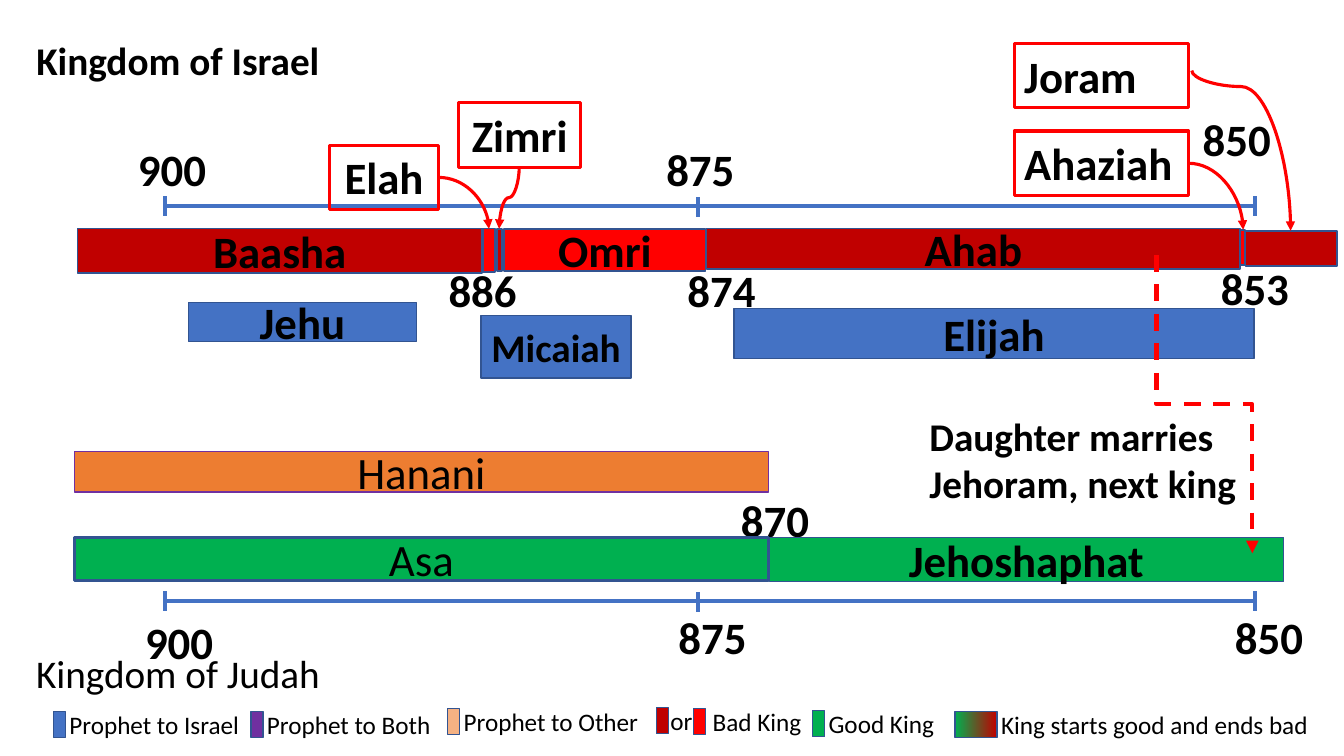
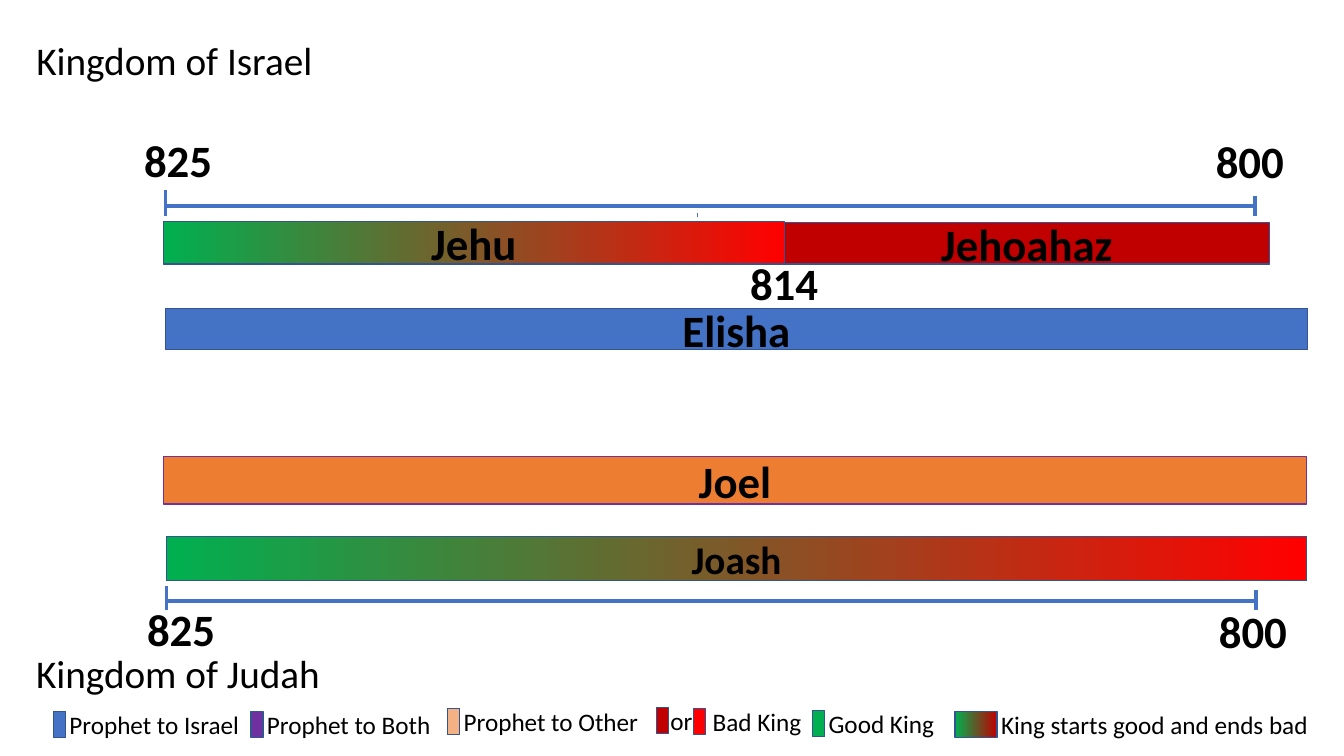
from lxml.etree import SubElement
from pptx import Presentation
from pptx.dml.color import RGBColor
from pptx.enum.dml import MSO_LINE
from pptx.enum.shapes import MSO_CONNECTOR as Connector, MSO_SHAPE as Shape
from pptx.enum.text import MSO_ANCHOR as Anchor, MSO_AUTO_SIZE as AutoSize, PP_ALIGN as Align
from pptx.oxml.ns import qn
from pptx.util import Inches, Pt

SLIDE_SIZE = 13.33, 7.5
FONT = "Calibri"
BLACK, RED, AXIS_BLUE, OUTLINE = "000000", "FF0000", "4472C4", "325491"
DARK_RED, GREEN, PURPLE = "C00000", "00B050", "7030A0"
YEAR = {"size": 32, "bold": True}
HEADING = {"size": 28, "bold": False}
LEGEND = {"size": 18, "bold": False}
YEAR_SIZE = 0.89, 0.64
HEADING_SIZE = 6.66, 0.57
HEADING_LEFT, ISRAEL_TOP, JUDAH_TOP = 0.26, 0.31, 6.39
ISRAEL_AXIS, JUDAH_AXIS = 2.04, 5.96

# role: (fill or gradient pair, outline)
ROLES = {
    "prophet": (AXIS_BLUE, OUTLINE),
    "other prophet": ("ED7D31", PURPLE),
    "bad": (DARK_RED, OUTLINE),
    "worse": (RED, OUTLINE),
    "good": (GREEN, OUTLINE),
    "good to bad": ((GREEN, RED), OUTLINE),
}

# swatch left, top, width, fill, label left, label width, label
LEGEND_ITEMS = [
    (0.53, 7.06, 0.12, AXIS_BLUE, 0.59, 1.9, "Prophet to Israel"),
    (2.49, 7.06, 0.12, PURPLE, 2.55, 1.84, "Prophet to Both"),
    (4.44, 7.03, 0.12, "F4B183", 4.5, 1.95, "Prophet to Other"),
    (6.51, 7.02, 0.12, DARK_RED, 6.55, 0.42, "or"),
    (6.88, 7.03, 0.12, RED, 6.97, 1.09, "Bad King"),
    (8.06, 7.05, 0.12, GREEN, 8.12, 1.26, "Good King"),
    (9.47, 7.06, 0.42, (GREEN, DARK_RED), 9.83, 3.28, "King starts good and ends bad"),
]

# axes: y, left, [(tick x, offset above, offset below, line width)]
# bars: text, left, top, width, height, role, format changes
# callouts: text, left, top, width, alignment
# arrows: preset, begin, end, vertical start, adjustment, line width, dashed
FULL_TICKS = [(1.64, -0.1, 0.1, 3), (6.92, -0.09, 0.11, 3), (12.45, -0.1, 0.1, 3)]
SLIDES = [
    {
        "title": {"bold": True},
        "axes": [(ISRAEL_AXIS, 1.64, FULL_TICKS), (JUDAH_AXIS, 1.64, FULL_TICKS)],
        "years": [
            ("900", 1.27, 1.36), ("875", 6.51, 1.36), ("850", 11.83, 1.06),
            ("886", 4.35, 2.56), ("874", 6.72, 2.56), ("853", 12.01, 2.54),
            ("900", 1.34, 6.05), ("875", 6.63, 6), ("850", 12.15, 6),
            ("870", 7.25, 4.84),
        ],
        "bars": [
            ("Baasha", 0.77, 2.27, 4.01, 0.44, "bad", {}),
            ("", 4.79, 2.27, 0.12, 0.43, "worse", {}),
            ("", 4.93, 2.27, 0.05, 0.42, "bad", {}),
            ("Omri", 5, 2.27, 2, 0.42, "worse", {}),
            ("Ahab", 7.01, 2.27, 5.29, 0.4, "bad", {}),
            ("", 12.3, 2.28, 0.05, 0.35, "worse", {}),
            ("", 12.35, 2.29, 0.91, 0.35, "bad", {}),
            ("Jehu", 1.87, 3, 2.26, 0.39, "prophet", {}),
            ("Micaiah", 4.77, 3.13, 1.49, 0.62, "prophet", {"size": 28}),
            ("Elijah", 7.28, 3.06, 5.16, 0.5, "prophet", {}),
            ("Hanani", 0.74, 4.48, 6.88, 0.4, "other prophet", {"bold": False}),
            ("Asa", 0.74, 5.33, 6.88, 0.43, "good", {"bold": False, "line": 2}),
            ("Jehoshaphat", 7.63, 5.33, 5.1, 0.44, "good", {}),
        ],
        "callouts": [
            ("Elah", 3.27, 1.44, 1.08, Align.CENTER),
            ("Zimri", 4.55, 1.02, 1.21, Align.CENTER),
            ("Ahaziah", 10.06, 1.3, 1.73, Align.LEFT),
            ("Joram", 10.06, 0.43, 1.73, Align.LEFT),
        ],
        "arrows": [
            ("curvedConnector2", (4.35, 1.76), (4.85, 2.27), False, None, 2.25, False),
            ("curvedConnector3", (5.15, 1.65), (4.95, 2.27), True, 0.5, 2.25, False),
            ("curvedConnector2", (11.79, 1.62), (12.33, 2.28), False, None, 2.25, False),
            ("curvedConnector3", (11.82, 0.7), (12.8, 2.29), True, 0.1, 2.25, False),
            ("bentConnector3", (11.47, 2.53), (12.42, 5.49), True, 0.5, 3, True),
        ],
        "notes": [("Daughter marries Jehoram, next king", 9.12, 4.04, 3.77, 1.04)],
    },
    {
        "title": {},
        "axes": [
            (ISRAEL_AXIS, 1.64, [(1.64, -0.15, 0.1, 2.5), (6.92, 0.07, 0.11, 0.5),
                                 (12.45, -0.1, 0.1, 3)]),
            (JUDAH_AXIS, 1.65, [(1.65, -0.15, 0.09, 2.5), (12.46, -0.11, 0.09, 3)]),
        ],
        "years": [
            ("825", 1.33, 1.27), ("800", 11.96, 1.28), ("814", 7.34, 2.49),
            ("825", 1.36, 5.92), ("800", 11.99, 5.94),
        ],
        "bars": [
            ("Jehu", 1.62, 2.2, 6.16, 0.42, "good to bad", {}),
            ("Jehoahaz", 7.78, 2.21, 4.81, 0.41, "bad", {}),
            ("Elisha", 1.64, 3.06, 11.33, 0.41, "prophet", {}),
            ("Joel", 1.62, 4.53, 11.34, 0.47, "other prophet", {}),
            ("Joash", 1.65, 5.32, 11.31, 0.44, "good to bad", {"size": 28}),
        ],
        "callouts": [],
        "arrows": [],
        "notes": [],
    },
]


def color(hex_string):
    return RGBColor.from_string(hex_string)


def inches(*lengths):
    return [Inches(length) for length in lengths]


def set_line(shape, line_color, width):
    shape.line.color.rgb = color(line_color)
    shape.line.width = Pt(width)


def write(shape, text, style, align=Align.LEFT, anchor=Anchor.TOP, wrap=True):
    frame = shape.text_frame
    frame_format = {"word_wrap": wrap, "auto_size": AutoSize.NONE, "vertical_anchor": anchor}
    for name, value in frame_format.items():
        setattr(frame, name, value)
    paragraph = frame.paragraphs[0]
    paragraph.alignment = align
    run = paragraph.add_run()
    run.text = text
    font_format = {"name": FONT, "size": Pt(style["size"]), "bold": style["bold"]}
    for name, value in font_format.items():
        setattr(run.font, name, value)
    run.font.color.rgb = color(BLACK)


def add_label(slide, text, box, style, wrap=False):
    write(slide.shapes.add_textbox(*inches(*box)), text, style, wrap=wrap)


def add_box(slide, box, fill, line_color, width=1):
    """Add a rectangle; fill is a colour, a pair for a gradient, or None."""
    shape = slide.shapes.add_shape(Shape.RECTANGLE, *inches(*box))
    shape.shadow.inherit = False
    set_line(shape, line_color, width)
    if fill is None:
        shape.fill.background()
    elif isinstance(fill, tuple):
        shape.fill.gradient()
        shape.fill.gradient_angle = 0
        for stop, stop_color in zip(shape.fill.gradient_stops, fill):
            stop.color.rgb = color(stop_color)
    else:
        shape.fill.solid()
        shape.fill.fore_color.rgb = color(fill)
    return shape


def add_line(slide, begin, end, line_color, width, kind=Connector.STRAIGHT):
    line = slide.shapes.add_connector(kind, *inches(*begin, *end))
    set_line(line, line_color, width)
    SubElement(line._element.spPr, qn("a:effectLst"))
    return line


def add_axis(slide, y, left, ticks):
    add_line(slide, (left, y), (left + 10.8, y), AXIS_BLUE, 3)
    for x, above, below, width in ticks:
        add_line(slide, (x, y + below), (x, y + above), AXIS_BLUE, width)


def add_arrow(slide, preset, begin, end, vertical, adjustment, width, dashed):
    """Add an arrow; a vertical start needs a turned box around the same centre."""
    (x1, y1), (x2, y2) = begin, end
    turn = {}
    if vertical:
        turn = {"rot": "5400000"} if x2 < x1 else {"rot": "16200000", "flipH": "1"}
        center_x, center_y = (x1 + x2) / 2, (y1 + y2) / 2
        half_width, half_height = abs(y2 - y1) / 2, abs(x2 - x1) / 2
        begin = center_x - half_width, center_y - half_height
        end = center_x + half_width, center_y + half_height
    arrow = add_line(slide, begin, end, RED, width, Connector.CURVE)
    properties = arrow._element.spPr
    for name, value in turn.items():
        properties.find(qn("a:xfrm")).set(name, value)
    geometry = properties.find(qn("a:prstGeom"))
    geometry.set("prst", preset)
    if adjustment is not None:
        guides = geometry.find(qn("a:avLst"))
        if guides is None:
            guides = SubElement(geometry, qn("a:avLst"))
        SubElement(guides, qn("a:gd"), name="adj1", fmla=f"val {round(adjustment * 100000)}")
    if dashed:
        arrow.line.dash_style = MSO_LINE.DASH
    SubElement(properties.find(qn("a:ln")), qn("a:tailEnd"), type="triangle")


def add_headings(slide, title_format):
    title = slide.shapes.title
    box = HEADING_LEFT, ISRAEL_TOP, *HEADING_SIZE
    for name, value in zip(("left", "top", "width", "height"), inches(*box)):
        setattr(title, name, value)
    write(title, "Kingdom of Israel", HEADING | title_format)
    add_label(slide, "Kingdom of Judah", (HEADING_LEFT, JUDAH_TOP, *HEADING_SIZE), HEADING, True)


def add_legend(slide):
    for left, top, width, fill, label_left, label_width, label in LEGEND_ITEMS:
        add_box(slide, (left, top, width, 0.26), fill, OUTLINE)
        add_label(slide, label, (label_left, top - 0.07, label_width, 0.4), LEGEND)


def add_timeline(presentation, content):
    slide = presentation.slides.add_slide(presentation.slide_layouts[5])
    add_headings(slide, content["title"])
    add_legend(slide)
    for axis in content["axes"]:
        add_axis(slide, *axis)
    for year, left, top in content["years"]:
        add_label(slide, year, (left, top, *YEAR_SIZE), YEAR)
    for text, left, top, width, height, role, changes in content["bars"]:
        bar = add_box(slide, (left, top, width, height), *ROLES[role], changes.get("line", 1))
        if text:
            write(bar, text, YEAR | changes, Align.CENTER, Anchor.MIDDLE)
    for text, left, top, width, align in content["callouts"]:
        callout = add_box(slide, (left, top, width, 0.64), None, RED, 2.25)
        write(callout, text, YEAR, align)
    for text, *box in content["notes"]:
        add_label(slide, text, box, HEADING | {"bold": True}, True)
    for arrow in content["arrows"]:
        add_arrow(slide, *arrow)


def main():
    presentation = Presentation()
    presentation.slide_width, presentation.slide_height = inches(*SLIDE_SIZE)
    for content in SLIDES:
        add_timeline(presentation, content)
    presentation.save("out.pptx")


if __name__ == "__main__":
    main()
